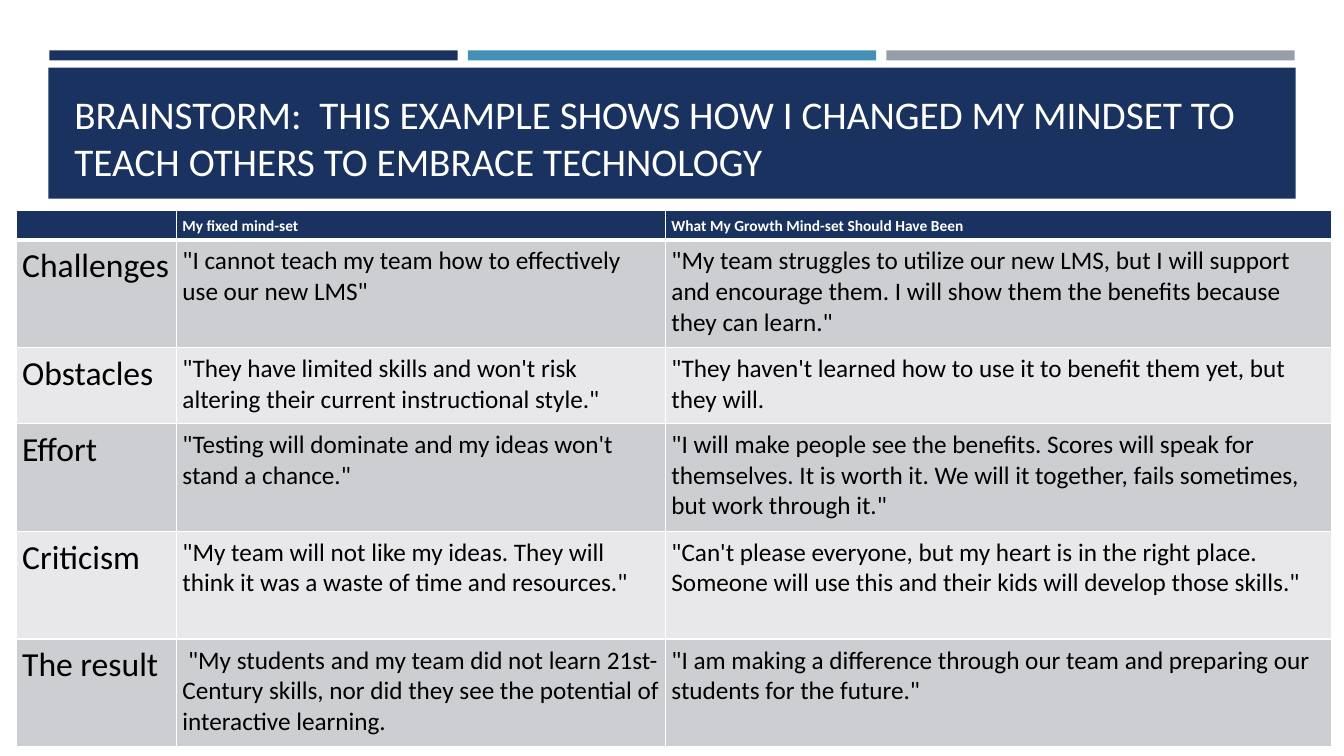
from lxml.etree import SubElement
from pptx import Presentation
from pptx.dml.color import RGBColor
from pptx.enum.shapes import MSO_SHAPE as Preset
from pptx.enum.text import MSO_ANCHOR as Anchor, PP_ALIGN as Align
from pptx.oxml.ns import qn
from pptx.util import Inches, Pt

NAVY, BLUE, GRAY, WHITE, BLACK = "1A3260", "4590B8", "969FA7", "FFFFFF", "000000"
BANDS = ("CDCED2", "E8E8EA")
TITLE = "BRAINSTORM:  THIS EXAMPLE SHOWS HOW I CHANGED MY MINDSET TO TEACH OTHERS TO EMBRACE TECHNOLOGY"
COLUMN_WIDTHS = (1.59, 4.85, 6.61)
ROW_HEIGHTS = (0.29, 1.07, 0.75, 1.07, 1.07, 1.07)
ROWS = (
    ("", "My fixed mind-set", "What My Growth Mind-set Should Have Been"),
    ("Challenges",
     '"I cannot teach my team how to effectively use our new LMS"',
     '"My team struggles to utilize our new LMS, but I will support and encourage them. '
     'I will show them the benefits because they can learn."'),
    ("Obstacles",
     '"They have limited skills and won\'t risk altering their current instructional style."',
     '"They haven\'t learned how to use it to benefit them yet, but they will.'),
    ("Effort",
     '"Testing will dominate and my ideas won\'t stand a chance."',
     '"I will make people see the benefits. Scores will speak for themselves. It is worth it. '
     'We will it together, fails sometimes, but work through it."'),
    ("Criticism",
     '"My team will not like my ideas. They will think it was a waste of time and resources."',
     '"Can\'t please everyone, but my heart is in the right place. '
     'Someone will use this and their kids will develop those skills."'),
    ("The result",
     ' "My students and my team did not learn 21st-Century skills, '
     'nor did they see the potential of interactive learning.',
     '"I am making a difference through our team and preparing our students for the future."'),
)
CELL_FORMAT = {
    "margin_left": Inches(0.06),
    "margin_top": Inches(0.06),
    "margin_right": Inches(0.05),
    "margin_bottom": Inches(0.04),
    "vertical_anchor": Anchor.TOP,
}


def color(value):
    """Turn a hex string into a colour."""
    return RGBColor.from_string(value)


def apply_format(target, values):
    """Set each attribute named in values on the target."""
    for name, value in values.items():
        setattr(target, name, value)


def write_text(paragraph, text, size, font_color, bold=False):
    """Write one left-aligned run and size the end of its paragraph."""
    paragraph.alignment = Align.LEFT
    if text:
        run = paragraph.add_run()
        run.text = text
        apply_format(run.font, {"name": "Calibri", "size": Pt(size), "bold": bold})
        run.font.color.rgb = color(font_color)
    SubElement(paragraph._p, qn("a:endParaRPr"), sz=str(size * 100))


def add_block(slide, left, top, width, height, fill):
    """Add a plain filled rectangle."""
    block = slide.shapes.add_shape(
        Preset.RECTANGLE, Inches(left), Inches(top), Inches(width), Inches(height))
    block.shadow.inherit = False
    block.fill.solid()
    block.fill.fore_color.rgb = color(fill)
    block.line.fill.background()


def add_accent_bars(slide, left, top, width, height):
    """Spread three coloured bars evenly over the box."""
    gap = 0.1
    bar_width = (width - 2 * gap) / 3
    for index, fill in enumerate((NAVY, BLUE, GRAY)):
        add_block(slide, left + index * (bar_width + gap), top, bar_width, height, fill)


def add_title_banner(slide, left, top, width, height):
    """Add the navy banner with the title set inside it."""
    add_block(slide, left, top, width, height, NAVY)
    title = slide.shapes.add_textbox(
        Inches(left + 0.16), Inches(top + 0.1), Inches(width - 0.31), Inches(height - 0.19))
    apply_format(title.text_frame, {"word_wrap": True, "vertical_anchor": Anchor.BOTTOM})
    write_text(title.text_frame.paragraphs[0], TITLE, 28, WHITE)


def add_borders(cell, bottom_width):
    """Draw white borders round a cell."""
    properties = cell._tc.get_or_add_tcPr()
    widths = {"a:lnL": 1, "a:lnR": 1, "a:lnT": 1, "a:lnB": bottom_width}
    for position, (tag, width) in enumerate(widths.items()):
        line = properties.makeelement(qn(tag), {"w": str(Pt(width))})
        SubElement(SubElement(line, qn("a:solidFill")), qn("a:srgbClr"), val=WHITE)
        properties.insert(position, line)


def add_mindset_table(slide, left, top, width, height):
    """Add the table that compares the two mind-sets."""
    table = slide.shapes.add_table(
        len(ROWS), len(COLUMN_WIDTHS), Inches(left), Inches(top),
        Inches(width), Inches(height)).table
    for column, column_width in zip(table.columns, COLUMN_WIDTHS):
        column.width = Inches(column_width)
    for row_index, (row, row_height) in enumerate(zip(table.rows, ROW_HEIGHTS)):
        row.height = Inches(row_height)
        header = row_index == 0
        fill = NAVY if header else BANDS[(row_index - 1) % 2]
        for column_index, (cell, text) in enumerate(zip(row.cells, ROWS[row_index])):
            apply_format(cell, CELL_FORMAT)
            cell.fill.solid()
            cell.fill.fore_color.rgb = color(fill)
            size = 11 if header else 24 if column_index == 0 else 18
            write_text(cell.text_frame.paragraphs[0], text, size,
                       WHITE if header else BLACK, header)
            add_borders(cell, 3 if header else 1)


def main():
    """Build and save the slide."""
    presentation = Presentation()
    apply_format(presentation, {"slide_width": Inches(13.33), "slide_height": Inches(7.5)})
    slide = presentation.slides.add_slide(presentation.slide_layouts[6])
    add_accent_bars(slide, 0.49, 0.5, 12.35, 0.1)
    add_title_banner(slide, 0.48, 0.67, 12.37, 1.3)
    add_mindset_table(slide, 0.16, 2.09, sum(COLUMN_WIDTHS), sum(ROW_HEIGHTS))
    presentation.save("out.pptx")


if __name__ == "__main__":
    main()
